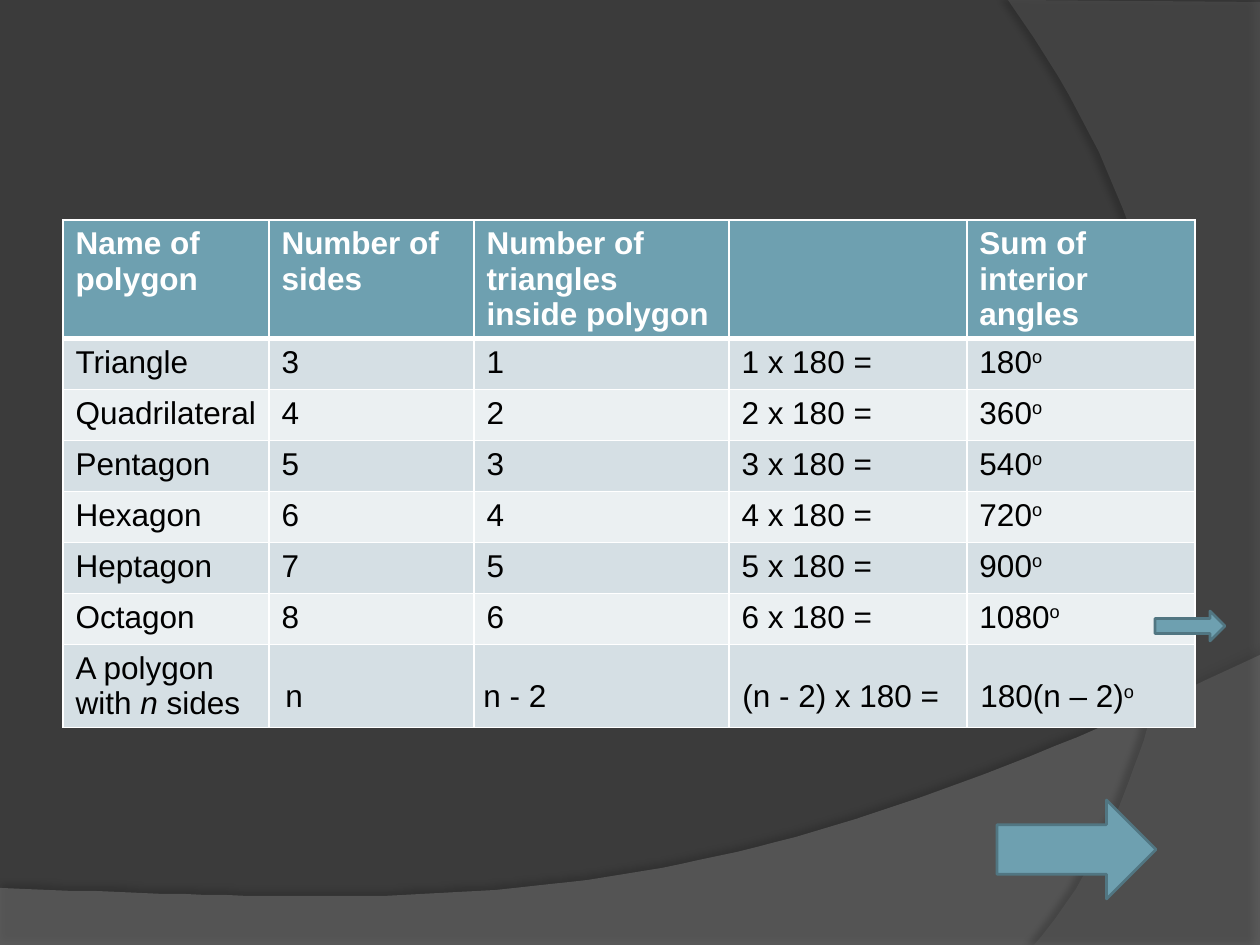
"""Build a slide that tables the interior angle sums of polygons."""
from typing import NamedTuple

from lxml.etree import SubElement
from pptx import Presentation
from pptx.dml.color import RGBColor as Rgb
from pptx.enum.shapes import MSO_SHAPE as Form
from pptx.enum.text import MSO_AUTO_SIZE as Auto
from pptx.oxml import parse_xml
from pptx.oxml.ns import nsdecls, qn
from pptx.util import Pt

PX = 914400 / 126
WIDE, HIGH = 1260, 945
FONT = "Arial"
DARK = Rgb(0x3B, 0x3B, 0x3B)
GREY = Rgb(0x7F, 0x7F, 0x7F)
SLATE = Rgb(0x5E, 0x5E, 0x5E)
TEAL = Rgb(0x6E, 0xA0, 0xB0)
EDGE = Rgb(0x51, 0x76, 0x82)
BANDS = Rgb(0xD5, 0xDF, 0xE4), Rgb(0xEB, 0xF0, 0xF2)
WHITE = Rgb(0xFF, 0xFF, 0xFF)
BLACK = Rgb(0, 0, 0)


class Run(NamedTuple):
    text: str
    raised: bool = False
    italic: bool = False


class Box(NamedTuple):
    left: int
    top: int
    width: int
    height: int


class Label(NamedTuple):
    box: Box
    runs: list[Run]


class Shade(NamedTuple):
    alpha: int
    blur: float
    dist: float
    angle: int


class Wave(NamedTuple):
    lead: list[tuple[int, int]]
    curve: list[tuple[int, int]]
    color: Rgb
    alpha: int
    shade: Shade


LIFT = Run("o", raised=True)
HEADS = ["Name of polygon", "Number of sides", "Number of triangles inside polygon",
         "", "Sum of interior angles"]
NAMES = ["Triangle", "Quadrilateral", "Pentagon", "Hexagon", "Heptagon", "Octagon"]
COLS = [206, 205, 255, 238, 228]
GRID = Box(63, 220, 1132, 520)
ROW = 51
WAVES = [
    Wave([(0, 888), (0, HIGH), (WIDE, HIGH)],
         [(WIDE, 655), (704, 919), (493, 906), (0, 888)],
         GREY, 45, Shade(35, 4, 3.5, 270)),
    Wave([(1008, 0), (WIDE, 2), (WIDE, HIGH)],
         [(1034, HIGH), (1178, 780), (1283, 378), (1008, 0)],
         SLATE, 40, Shade(45, 4, 4, 180)),
]
LABELS = [
    Label(Box(273, 670, 79, 50), [Run("n")]),
    Label(Box(471, 670, 112, 50), [Run("n - 2")]),
    Label(Box(730, 670, 238, 50), [Run("(n - 2) x 180 =")]),
    Label(Box(968, 670, 228, 50), [Run("180(n – 2)"), LIFT]),
]
ARROWS = [Box(1155, 611, 70, 30), Box(997, 800, 159, 99)]


def emu(px: int) -> int:
    return round(px * PX)


def place(box: Box) -> list[int]:
    return [emu(px) for px in box]


def write(frame, runs: list[Run], *, color: Rgb = BLACK, bold: bool = False,
          size: int = 18) -> None:
    for part in runs:
        run = frame.paragraphs[0].add_run()
        run.text = part.text
        font = run.font
        font.name, font.size, font.bold = FONT, Pt(size), bold
        font.italic = part.italic
        font.color.rgb = color
        if part.raised:
            font._element.set("baseline", "30000")


def bend(ends: list[tuple[int, int]], steps: int = 60) -> list[tuple[float, float]]:
    def point(t: float) -> tuple[float, float]:
        terms = (1 - t) ** 3, 3 * t * (1 - t) ** 2, 3 * t * t * (1 - t), t ** 3
        return tuple(sum(k * end[axis] for k, end in zip(terms, ends)) for axis in (0, 1))
    return [point(i / steps) for i in range(steps + 1)]


def fade(node, alpha: int) -> None:
    SubElement(node, qn("a:alpha"), val=str(alpha * 1000))


def draw_wave(slide, wave: Wave) -> None:
    first, *rest = wave.lead + bend(wave.curve)
    pen = slide.shapes.build_freeform(*first, scale=PX)
    pen.add_line_segments(rest, close=True)
    shape = pen.convert_to_shape()
    shape.fill.solid()
    shape.fill.fore_color.rgb = wave.color
    shape.line.fill.background()
    shape.shadow.inherit = False
    props = shape._element.spPr
    fade(props.find(f"{qn('a:solidFill')}/{qn('a:srgbClr')}"), wave.alpha)
    shade = wave.shade
    cast = SubElement(props.find(qn("a:effectLst")), qn("a:outerShdw"),
                      blurRad=str(Pt(shade.blur)), dist=str(Pt(shade.dist)),
                      dir=str(shade.angle * 60000), algn="ctr", rotWithShape="0")
    fade(SubElement(cast, qn("a:srgbClr"), val=str(BLACK)), shade.alpha)


def frame_cell(cell, top: int, base: int) -> None:
    props = cell._tc.get_or_add_tcPr()
    for i, (side, width) in enumerate(zip("LRTB", (1, 1, top, base))):
        props.insert(i, parse_xml(
            f'<a:ln{side} {nsdecls("a")} w="{Pt(width)}"><a:solidFill>'
            f'<a:srgbClr val="{WHITE}"/></a:solidFill></a:ln{side}>'))


def body() -> list[list[list[Run]]]:
    rows = [[[Run(name)], [Run(str(count + 2))], [Run(str(count))],
             [Run(f"{count} x 180 =")], [Run(str(count * 180)), LIFT]]
            for count, name in enumerate(NAMES, 1)]
    last = [Run("A polygon with "), Run("n", italic=True), Run(" sides")]
    return rows + [[last, [], [], [], []]]


def draw_table(slide) -> None:
    rows = [[[Run(head)] if head else [] for head in HEADS]] + body()
    holder = slide.shapes.add_table(len(rows), len(COLS), *place(GRID))
    table = holder.table
    for col, width in zip(table.columns, COLS):
        col.width = emu(width)
    for r, row in enumerate(rows):
        table.rows[r].height = emu(ROW)
        head = r == 0
        for c, runs in enumerate(row):
            cell = table.cell(r, c)
            cell.fill.solid()
            cell.fill.fore_color.rgb = TEAL if head else BANDS[(r - 1) % 2]
            frame_cell(cell, 3 if r == 1 else 1, 3 if head else 1)
            write(cell.text_frame, runs, color=WHITE if head else BLACK, bold=head)
    holder.height = emu(GRID.height)


def draw_label(slide, label: Label) -> None:
    frame = slide.shapes.add_textbox(*place(label.box)).text_frame
    frame.word_wrap = True
    frame.auto_size = Auto.SHAPE_TO_FIT_TEXT
    write(frame, label.runs)


def draw_arrow(slide, box: Box) -> None:
    shape = slide.shapes.add_shape(Form.RIGHT_ARROW, *place(box))
    shape.shadow.inherit = False
    shape.fill.solid()
    shape.fill.fore_color.rgb = TEAL
    shape.line.color.rgb = EDGE
    shape.line.width = Pt(1.5)


def main() -> None:
    deck = Presentation()
    deck.slide_width, deck.slide_height = emu(WIDE), emu(HIGH)
    slide = deck.slides.add_slide(deck.slide_layouts[6])
    slide.background.fill.solid()
    slide.background.fill.fore_color.rgb = DARK
    for wave in WAVES:
        draw_wave(slide, wave)
    draw_table(slide)
    for label in LABELS:
        draw_label(slide, label)
    for box in ARROWS:
        draw_arrow(slide, box)
    deck.save("out.pptx")


if __name__ == "__main__":
    main()
